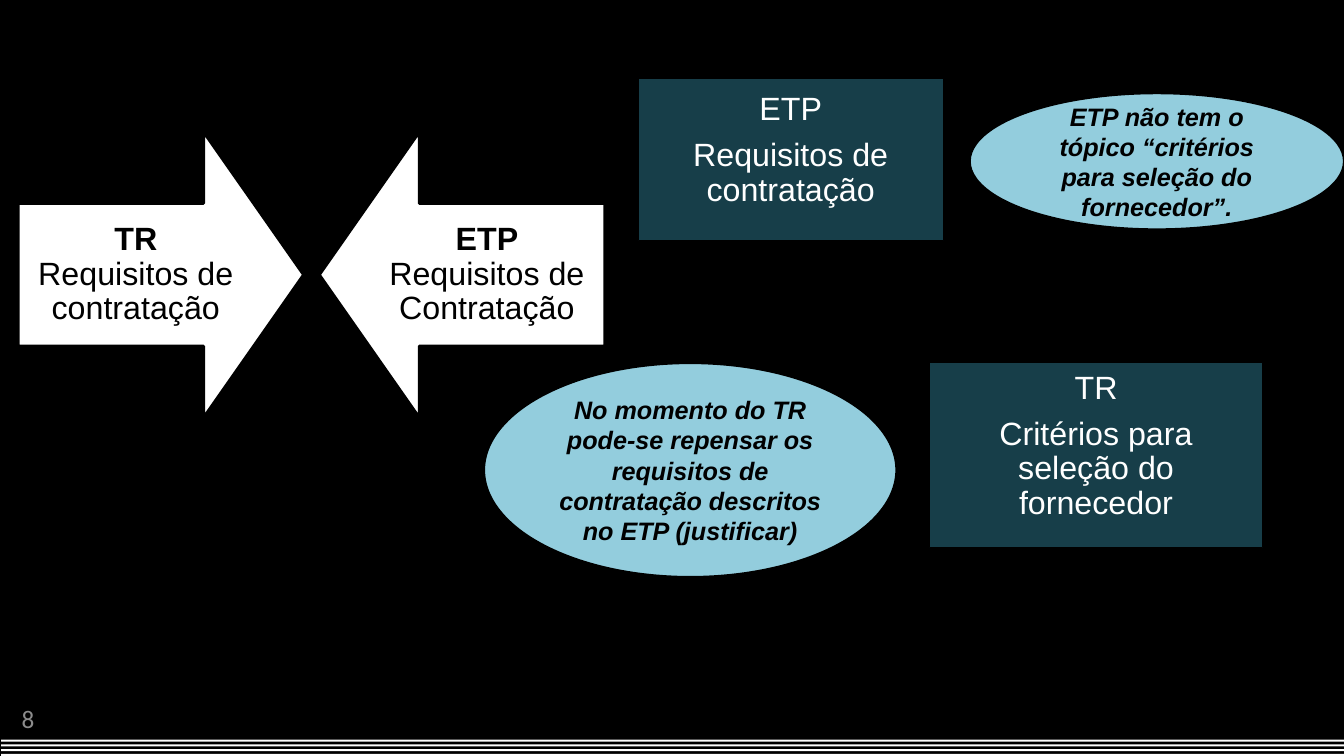
import pptx
import pptx.util
import pptx.dml.color
import pptx.enum.shapes
import pptx.enum.text

Cm = pptx.util.Cm
Pt = pptx.util.Pt
SHAPES = pptx.enum.shapes.MSO_SHAPE
ALIGN = pptx.enum.text.PP_ALIGN
COLORS = {
    "black": "000000",
    "white": "FFFFFF",
    "petrol": "173E49",
    "sky": "93CDDD",
    "grey": "8C8C8C",
}


def color(name):
    return pptx.dml.color.RGBColor.from_string(COLORS[name])


def add_figure(page, kind, box, fill, line_width):
    figure = page.shapes.add_shape(kind, *[Cm(length) for length in box])
    figure.shadow.inherit = False
    figure.fill.solid()
    figure.fill.fore_color.rgb = color(fill)
    if line_width:
        figure.line.color.rgb = color("black")
        figure.line.width = Pt(line_width)
    else:
        figure.line.fill.background()
    figure.text_frame.word_wrap = True
    figure.text_frame.vertical_anchor = pptx.enum.text.MSO_ANCHOR.MIDDLE
    return figure


def set_margins(frame, left, top, right, bottom):
    frame.margin_left, frame.margin_top = Cm(left), Cm(top)
    frame.margin_right, frame.margin_bottom = Cm(right), Cm(bottom)


def style(para, size, ink, font="Arial", align=ALIGN.CENTER):
    para.alignment = align
    para.font.name = font
    para.font.size = Pt(size)
    para.font.color.rgb = color(ink)


def add_arrow(page, box, kind, heading, detail):
    arrow = add_figure(page, kind, box, "white", 2)
    arrow.adjustments[0] = 0.5
    arrow.adjustments[1] = 0.35
    set_margins(arrow.text_frame, 0.45, 0.45, 0.45, 0.45)
    para = arrow.text_frame.paragraphs[0]
    style(para, 23, "black")
    para.line_spacing = 0.9
    span = para.add_run()
    span.text = heading
    span.font.bold = True
    para.add_run().text = " " + detail


def add_panel(page, box, heading, detail):
    frame = add_figure(page, SHAPES.RECTANGLE, box, "petrol", 0.75).text_frame
    set_margins(frame, 0.45, 0, 0.45, 0.45)
    frame.text = f"{heading}\n{detail}"
    for para in frame.paragraphs:
        style(para, 23, "white")
        para.line_spacing = 0.9
    frame.paragraphs[1].space_before = Pt(8)


def add_remark(page, box, text):
    frame = add_figure(page, SHAPES.OVAL, box, "sky", 2).text_frame
    frame.text = text
    para = frame.paragraphs[0]
    style(para, 18, "black")
    para.font.bold = True
    para.font.italic = True


def add_stripes(page, box, count):
    left, top, width, height = box
    thickness = 0.05
    pitch = (height - thickness) / (count - 1)
    for index in range(count):
        stripe = (left, top + index * pitch, width, thickness)
        add_figure(page, SHAPES.RECTANGLE, stripe, "white", 0)


def add_page_number(page, box, number):
    frame = page.shapes.add_textbox(*[Cm(length) for length in box]).text_frame
    frame.word_wrap = True
    set_margins(frame, 0, 0, 0, 0)
    frame.text = number
    style(frame.paragraphs[0], 18, "grey", "Calibri", ALIGN.RIGHT)


def main():
    deck = pptx.Presentation()
    deck.slide_width, deck.slide_height = Cm(33.87), Cm(19.05)
    page = deck.slides.add_slide(deck.slide_layouts[6])
    page.background.fill.solid()
    page.background.fill.fore_color.rgb = color("black")

    add_stripes(page, (0.03, 18.64, 33.84, 0.41), 4)
    add_page_number(page, (0.03, 17.73, 0.84, 0.89), "8")
    add_arrow(page, (0.46, 3.33, 7.19, 7.19), SHAPES.RIGHT_ARROW,
              "TR", "Requisitos de contratação")
    add_arrow(page, (8.05, 3.33, 7.19, 7.19), SHAPES.LEFT_ARROW,
              "ETP", "Requisitos de Contratação")
    add_panel(page, (23.42, 9.14, 8.41, 4.67),
              "TR", "Critérios para seleção do fornecedor")
    add_panel(page, (16.08, 1.98, 7.7, 4.09),
              "ETP", "Requisitos de contratação")
    add_remark(page, (24.43, 2.34, 9.45, 3.45),
               "ETP não tem o tópico “critérios para seleção do fornecedor”.")
    add_remark(page, (12.19, 9.14, 10.41, 5.41),
               "No momento do TR pode-se repensar os requisitos de "
               "contratação descritos no ETP (justificar)")
    deck.save("out.pptx")


if __name__ == "__main__":
    main()
